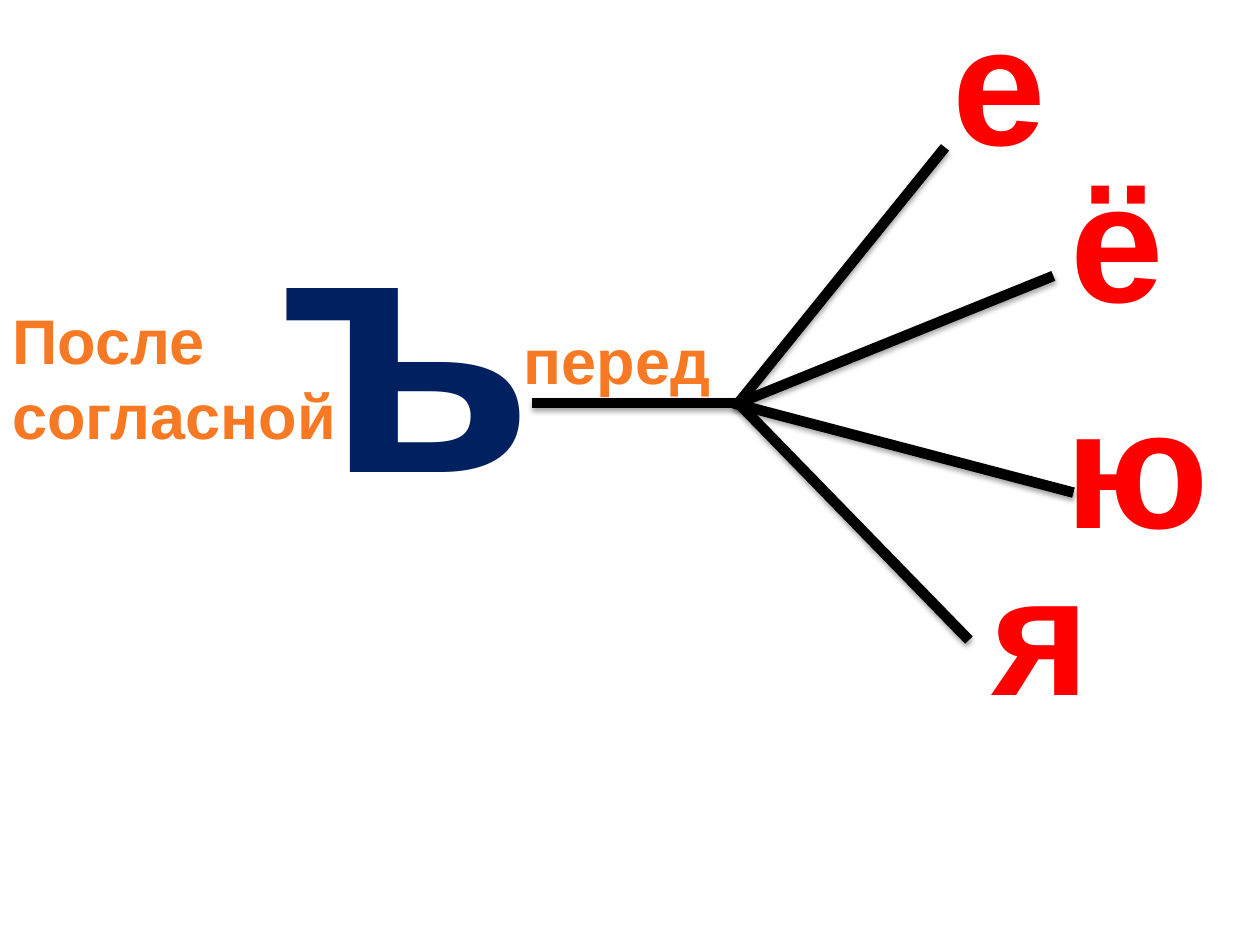
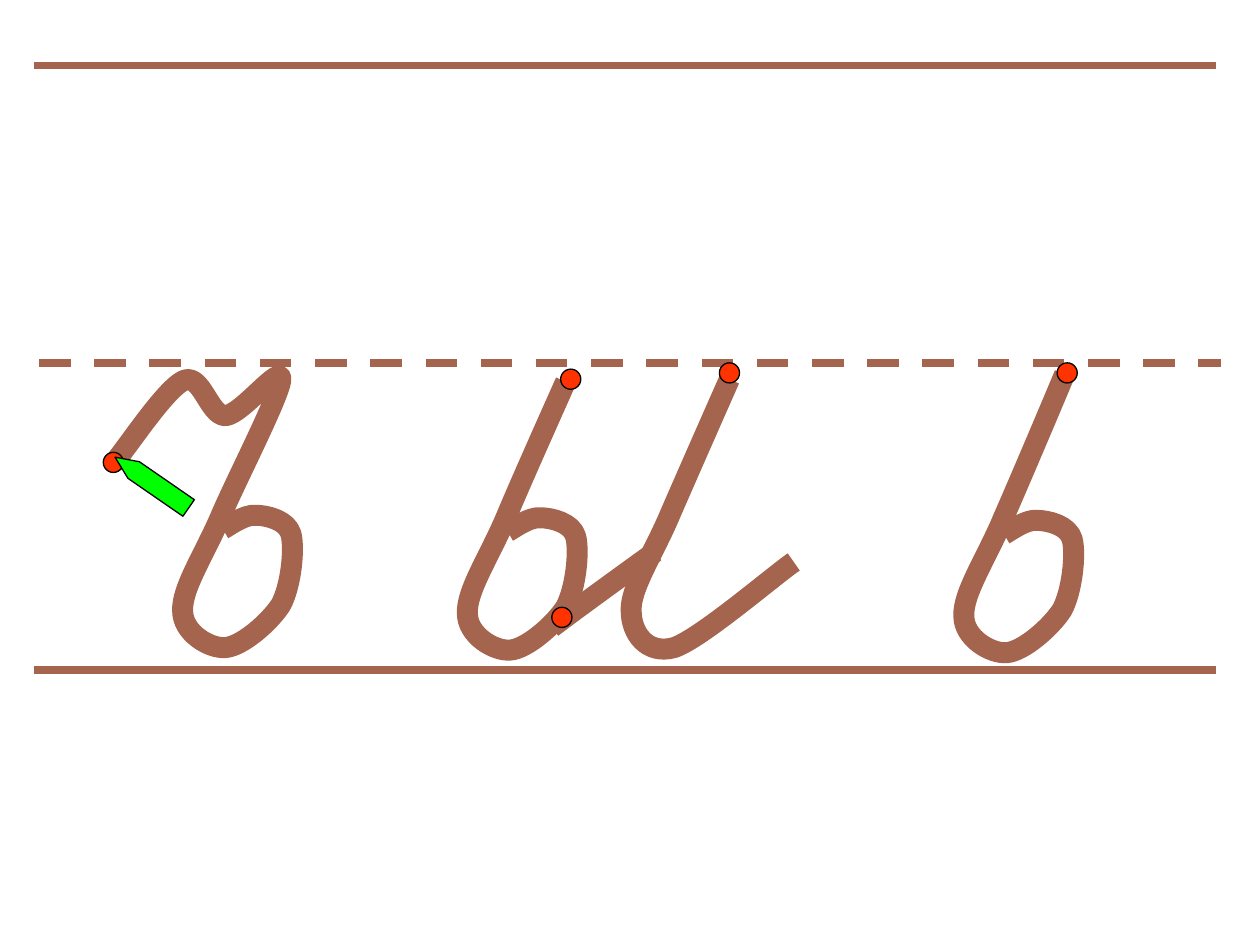
import pptx
import pptx.util
import pptx.dml.color
import pptx.enum.dml
import pptx.enum.shapes
import pptx.enum.text
import pptx.oxml
import pptx.oxml.ns

Inches = pptx.util.Inches
Pt = pptx.util.Pt
RGBColor = pptx.dml.color.RGBColor
Shape = pptx.enum.shapes.MSO_SHAPE

BLACK = RGBColor(0x00, 0x00, 0x00)
RED = RGBColor(0xFF, 0x00, 0x00)
ORANGE = RGBColor(0xF8, 0x79, 0x24)
NAVY = RGBColor(0x00, 0x20, 0x60)
BROWN = RGBColor(0xA5, 0x64, 0x4E)
DOT = RGBColor(0xFF, 0x33, 0x00)
GREEN = RGBColor(0x00, 0xFF, 0x00)

SHADE = (
    '<a:outerShdw blurRad="39370" dist="22860" dir="5400000" rotWithShape="0">'
    '<a:srgbClr val="000000"><a:alpha val="35000"/></a:srgbClr></a:outerShdw>'
)

LOOP = [
    (1.77, 4.2),
    (1.81, 4.18), (1.94, 4.08), (2.03, 4.09),
    (2.12, 4.09), (2.28, 4.13), (2.31, 4.24),
    (2.34, 4.36), (2.31, 4.65), (2.23, 4.8),
    (2.14, 4.94), (1.92, 5.13), (1.79, 5.14),
    (1.66, 5.15), (1.45, 5.02), (1.45, 4.85),
    (1.44, 4.67), (1.63, 4.39), (1.76, 4.08),
]
WAVE = [
    (1.89, 3.78), (2.22, 3.14), (2.23, 3.01),
    (2.23, 2.88), (1.92, 3.29), (1.79, 3.3),
    (1.66, 3.3), (1.6, 2.96), (1.46, 3.02),
    (1.31, 3.09), (1.02, 3.54), (0.9, 3.68),
]
STEM = [(1.9, 3.76), (2.15, 3.17), (2.25, 2.93)]
SHORT = [(1.89, 3.77), (2.15, 3.19), (2.23, 3.01)]
HOOK = [
    (6.3, 4.46),
    (6.14, 4.57), (5.56, 5.07), (5.35, 5.14),
    (5.13, 5.2), (5.01, 5.02), (5.01, 4.85),
    (5, 4.67), (5.19, 4.39), (5.32, 4.08),
    (5.45, 3.78), (5.71, 3.19), (5.79, 3.01),
]
LINK = [(5.2, 4.38), (5.06, 4.48), (4.55, 4.85), (4.38, 4.98)]


class Deck:
    font = "Arial"

    def __init__(self):
        self.file = pptx.Presentation()
        self.file.slide_width = Inches(10)
        self.file.slide_height = Inches(7.5)

    def page(self):
        self.slide = self.file.slides.add_slide(self.file.slide_layouts[6])

    def text(self, box, lines, size, color, wrap=False, center=False):
        frame = self.slide.shapes.add_textbox(*map(Inches, box)).text_frame
        frame.word_wrap = wrap
        frame.auto_size = pptx.enum.text.MSO_AUTO_SIZE.SHAPE_TO_FIT_TEXT
        for i, line in enumerate(lines):
            para = frame.add_paragraph() if i else frame.paragraphs[0]
            if center:
                para.alignment = pptx.enum.text.PP_ALIGN.CENTER
            run = para.add_run()
            run.text = line
            run.font.name = self.font
            run.font.size = Pt(size)
            run.font.bold = True
            run.font.color.rgb = color

    def line(self, start, end, color, width, shade="", dash=None):
        item = self.slide.shapes.add_connector(
            pptx.enum.shapes.MSO_CONNECTOR.STRAIGHT, *map(Inches, start + end)
        )
        item.line.color.rgb = color
        item.line.width = Pt(width)
        if dash:
            item.line.dash_style = dash
        space = pptx.oxml.ns.nsdecls("a")
        item._element.spPr.append(
            pptx.oxml.parse_xml(f"<a:effectLst {space}>{shade}</a:effectLst>")
        )

    def stroke(self, points, dx=0, dy=0):
        spots = [(Inches(x + dx), Inches(y + dy)) for x, y in points]
        pen = self.slide.shapes.build_freeform(*spots[0], scale=1.0)
        pen.add_line_segments(spots[1:], close=False)
        item = pen.convert_to_shape()
        self.curve(item)
        item.shadow.inherit = False
        item.fill.background()
        item.line.color.rgb = BROWN
        item.line.width = Pt(12)

    def curve(self, item):
        parts = item._element.xpath(".//a:lnTo")
        for first, *rest in zip(parts[::3], parts[1::3], parts[2::3]):
            first.tag = pptx.oxml.ns.qn("a:cubicBezTo")
            for part in rest:
                first.append(part[0])
                part.getparent().remove(part)

    def shape(self, kind, box, fill):
        item = self.slide.shapes.add_shape(kind, *map(Inches, box))
        item.shadow.inherit = False
        item.fill.solid()
        item.fill.fore_color.rgb = fill
        item.line.color.rgb = BLACK
        item.line.width = Pt(0.75)
        return item

    def dot(self, x, y):
        self.shape(Shape.FLOWCHART_CONNECTOR, (x, y, 0.16, 0.16), DOT)


def rule(deck):
    deck.page()
    hub = (5.86, 3.2)
    for start, end in [
        ((4.22, 3.2), hub),
        (hub, (7.5, 1.17)),
        (hub, (8.36, 2.19)),
        ((5.82, 3.2), (8.52, 3.91)),
        (hub, (7.69, 5.08)),
    ]:
        deck.line(start, end, BLACK, 6, SHADE)
    for sign, x, y, width, wrap in [
        ("е", 7.46, -0.23, 0.95, False),
        ("ё", 8.4, 1.02, 1.02, True),
        ("ю", 8.36, 2.81, 1.25, True),
        ("я", 7.77, 4.14, 0.99, False),
    ]:
        deck.text((x, y, width, 1.72), [sign], 96, RED, wrap)
    deck.text((0, 2.34, 2.79, 1.31), ["После", "согласной"], 36, ORANGE)
    deck.text((4.06, 2.5, 1.7, 0.71), ["перед"], 36, ORANGE)
    deck.text((2.11, 0.94, 2.24, 3.45), ["ъ"], 199, NAVY, center=True)


def script(deck):
    deck.page()
    deck.stroke(LOOP + WAVE)
    deck.stroke(LOOP + STEM, 6.2, 0.04)
    for x, y, dash in [
        (0.27, 0.52, None),
        (0.31, 2.88, pptx.enum.dml.MSO_LINE.DASH),
        (0.27, 5.32, None),
    ]:
        deck.line((x, y), (x + 9.38, y), BROWN, 4.5, dash=dash)
    deck.dot(0.82, 3.59)
    deck.dot(8.39, 2.88)
    deck.stroke(LOOP + SHORT, 2.26, 0.02)
    deck.stroke(HOOK)
    deck.stroke(LINK)
    deck.dot(4.38, 4.82)
    deck.dot(5.71, 2.88)
    pen = deck.shape(Shape.PENTAGON, (0.85, 3.75, 0.71, 0.16), GREEN)
    pen.adjustments[0] = 1.124
    pen.rotation = 214.6
    deck.dot(4.45, 2.93)


def main():
    deck = Deck()
    rule(deck)
    script(deck)
    deck.file.save("out.pptx")


if __name__ == "__main__":
    main()
